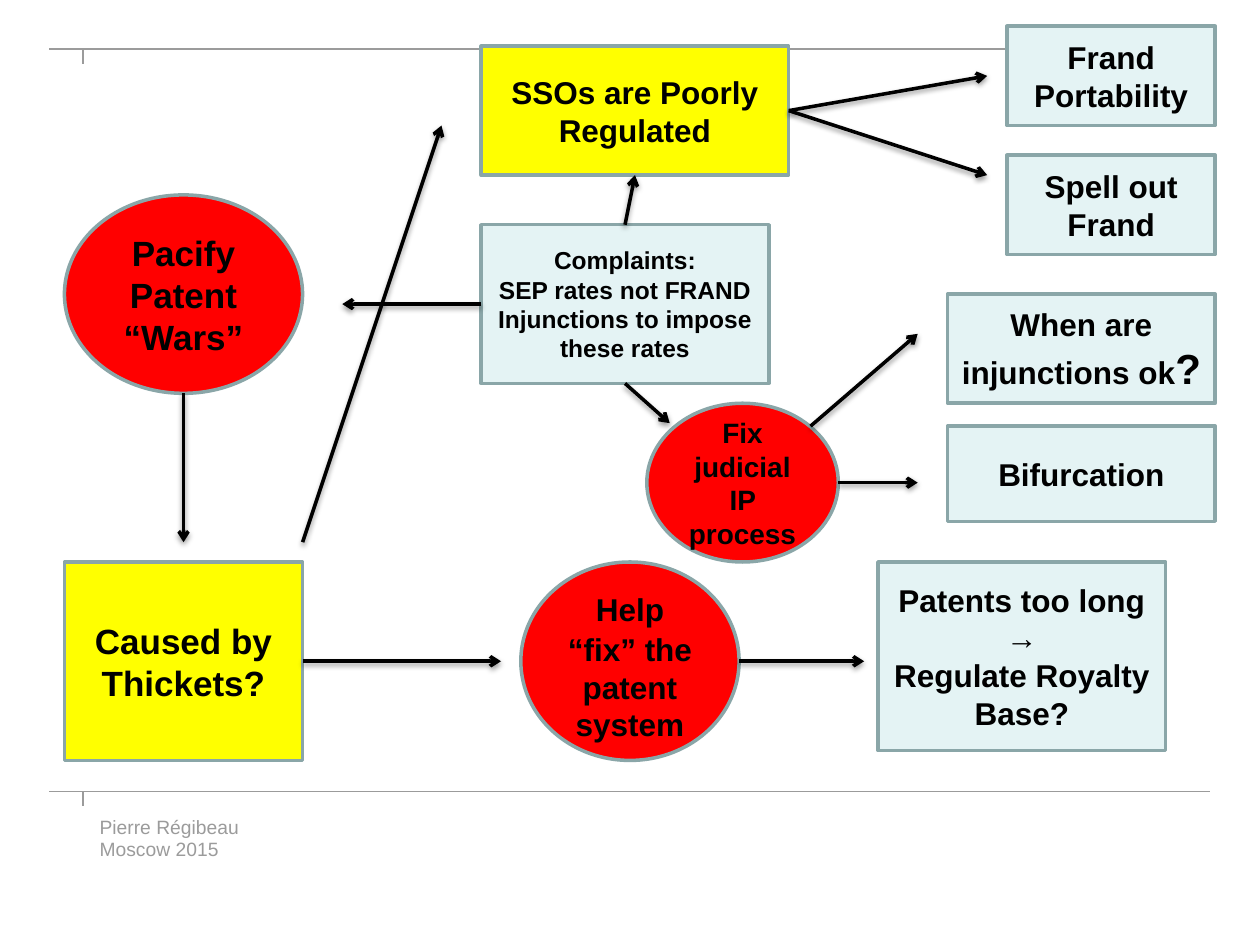
from lxml import etree
from pptx import Presentation
from pptx.dml.color import RGBColor
from pptx.enum.shapes import MSO_CONNECTOR, MSO_SHAPE
from pptx.enum.text import MSO_ANCHOR, PP_ALIGN
from pptx.oxml.ns import qn
from pptx.util import Cm, Inches, Pt

RECT, OVAL = MSO_SHAPE.RECTANGLE, MSO_SHAPE.OVAL
LINE = MSO_CONNECTOR.STRAIGHT
MID, CENTER = MSO_ANCHOR.MIDDLE, PP_ALIGN.CENTER
TOP, BOTTOM, RIGHT, LEFT = 0, 2, 3, 1

COLORS = {"pale": "E4F3F4", "yellow": "FFFF00", "red": "FF0000",
          "edge": "8AA6A8", "rule": "9B9B9B", "ink": "000000"}

# The chart sits on a 4 mm grid
STEP, LEFT_EDGE, TOP_EDGE = Cm(0.4), Cm(1.3), Cm(0.53)

# name: shape, fill, (column, row, columns, rows), size, paragraphs
# A paragraph is a string, or a list of (text, size) runs
NODES = {
    "claims": (RECT, "pale", (21, 10, 14.5, 8), 14,
               ["Complaints:", "SEP rates not FRAND",
                "Injunctions to impose these rates"]),
    "wars": (OVAL, "red", (0, 8.5, 12, 10), 20, ["Pacify", "Patent “Wars”"]),
    "thicket": (RECT, "yellow", (0, 27, 12, 10), 20, ["Caused by Thickets?"]),
    "patent": (OVAL, "red", (23, 27, 11, 10), 18,
               [[("Help", 18), (" ", 24), ("“fix” the patent system", 18)]]),
    "royal": (RECT, "pale", (41, 27, 14.5, 9.5), 18,
              ["Patents too long", "→", "Regulate Royalty Base?"]),
    "bodies": (RECT, "yellow", (21, 1, 15.5, 6.5), 18,
               ["SSOs are Poorly Regulated"]),
    "port": (RECT, "pale", (47.5, 0, 10.5, 5), 18, ["Frand Portability"]),
    "spell": (RECT, "pale", (47.5, 6.5, 10.5, 5), 18, ["Spell out Frand"]),
    "court": (OVAL, "red", (29.35, 19, 9.65, 8), 16,
              ["Fix judicial IP process"]),
    "when": (RECT, "pale", (44.5, 13.5, 13.5, 5.5), 18,
             [[("When are injunctions ok", 18), ("?", 24)]]),
    "split": (RECT, "pale", (44.5, 20.15, 13.5, 4.8), 18, ["Bifurcation"]),
}

# Each end is a (column, row) point or a (node, side) joint
ARROWS = [
    (("claims", LEFT), (14, 14)),
    ((6, 18.5), (6, 26)),
    (("thicket", RIGHT), (22, 32)),
    ((12, 26), (19, 5)),
    (("claims", TOP), ("bodies", BOTTOM)),
    (("bodies", RIGHT), (46.5, 2.5)),
    (("bodies", RIGHT), (46.5, 7.5)),
    (("claims", BOTTOM), (30.5, 20)),
    ((37.6, 20.15), (43, 15.5)),
    ((39, 23), (43, 23)),
    ((34, 32), (40.3, 32)),
]


def rgb(name):
    return RGBColor.from_string(COLORS[name])


def grid(col, row):
    return int(LEFT_EDGE + col * STEP), int(TOP_EDGE + row * STEP)


def style(item, **values):
    for key, value in values.items():
        setattr(item, key, value)


def write(frame, paras, size, color, bold=None, **form):
    for i, runs in enumerate(paras):
        para = frame.paragraphs[0] if i == 0 else frame.add_paragraph()
        style(para, **form)
        for text, pts in [(runs, size)] if isinstance(runs, str) else runs:
            run = para.add_run()
            run.text = text
            style(run.font, name="Arial", size=Pt(pts), bold=bold)
            run.font.color.rgb = rgb(color)


def stroke(item, color, width):
    item.line.color.rgb = rgb(color)
    item.line.width = Pt(width)


def node(slide, kind, fill, area, size, paras):
    col, row, wide, high = area
    shape = slide.shapes.add_shape(kind, *grid(col, row),
                                   int(wide * STEP), int(high * STEP))
    shape.shadow.inherit = False
    shape.fill.solid()
    shape.fill.fore_color.rgb = rgb(fill)
    stroke(shape, "edge", 2)
    shape.text_frame.vertical_anchor = MID
    write(shape.text_frame, paras, size, "ink", True, alignment=CENTER)
    return shape


def link(slide, start, end, color, width):
    line = slide.shapes.add_connector(LINE, *start, *end)
    stroke(line, color, width)
    effect = etree.SubElement(line._element.spPr, qn("a:effectLst"))
    return line, effect


def arrow(slide, nodes, start, end):
    ends = [(0, 0) if p[0] in nodes else grid(*p) for p in (start, end)]
    line, effect = link(slide, *ends, "ink", 2)
    for point, join in ((start, line.begin_connect), (end, line.end_connect)):
        if point[0] in nodes:
            join(nodes[point[0]], point[1])
    # Open head and soft shadow below
    etree.SubElement(line.line._get_or_add_ln(), qn("a:tailEnd"), type="arrow")
    shade = etree.SubElement(effect, qn("a:outerShdw"), blurRad=str(Pt(3.1)),
                             dist=str(Pt(1.6)), dir="5400000", rotWithShape="0")
    tint = etree.SubElement(shade, qn("a:srgbClr"), val=COLORS["ink"])
    etree.SubElement(tint, qn("a:alpha"), val="38000")


def rule(slide, y):
    for ends in (((0.39, y), (9.6, y)), ((0.66, y), (0.66, y + 0.12))):
        start, end = [[Inches(v) for v in p] for p in ends]
        link(slide, start, end, "rule", 0.75)


def footer(slide):
    box = slide.shapes.add_textbox(Inches(0.79), Inches(6.47),
                                   Inches(4.55), Inches(0.36))
    style(box.text_frame, word_wrap=True, margin_left=0, margin_right=0,
          margin_top=0, margin_bottom=0)
    write(box.text_frame, ["Pierre Régibeau", "Moscow 2015"], 11, "rule",
          line_spacing=Pt(13))


def main():
    deck = Presentation()
    style(deck, slide_width=Inches(10), slide_height=Inches(7.5))
    slide = deck.slides.add_slide(deck.slide_layouts[6])
    # Page frame
    for y in (0.39, 6.28):
        rule(slide, y)
    footer(slide)
    # Flow chart
    nodes = {name: node(slide, *parts) for name, parts in NODES.items()}
    for start, end in ARROWS:
        arrow(slide, nodes, start, end)
    deck.save("out.pptx")


if __name__ == "__main__":
    main()
